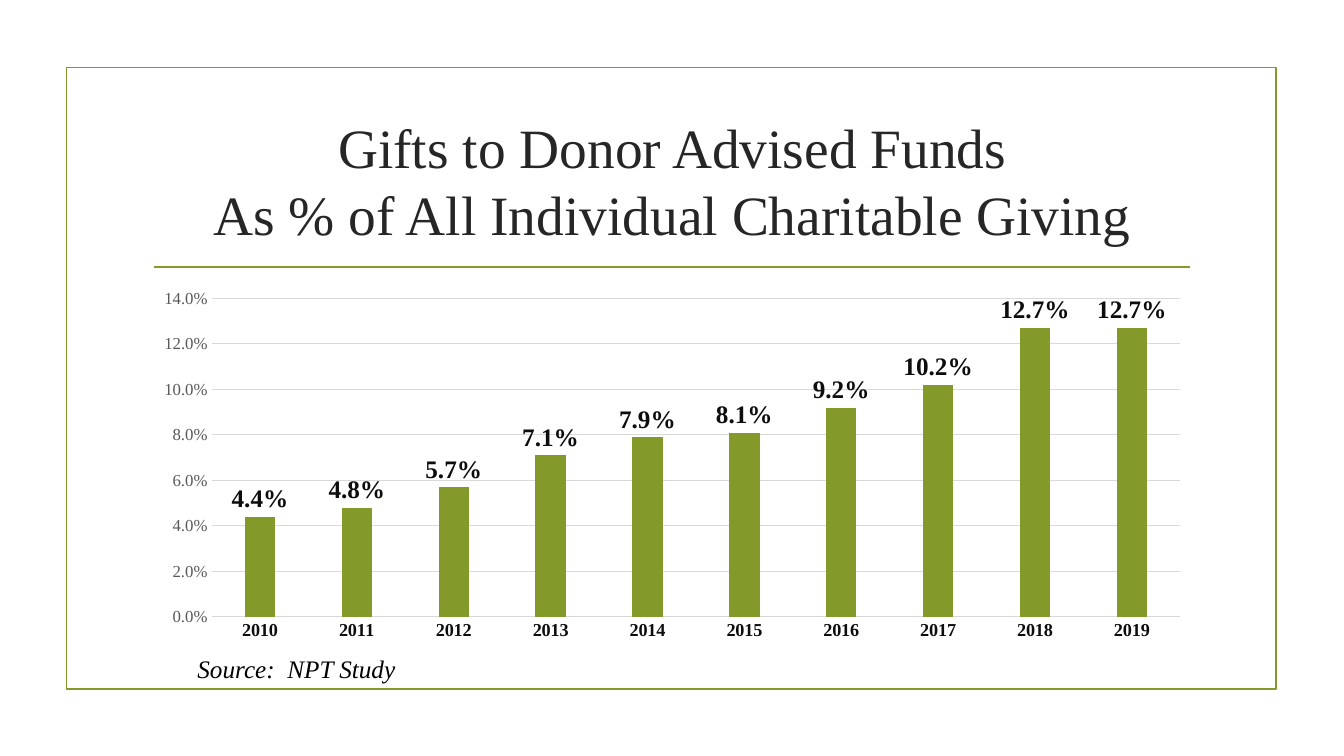
"""Builds a slide charting donor advised fund gifts as a share of individual giving."""
import pptx
import pptx.chart.data
import pptx.dml.color
import pptx.enum.chart
import pptx.enum.shapes
import pptx.enum.text
import pptx.oxml
import pptx.util

Pt = pptx.util.Pt
FONT = "Times New Roman"
GREEN, DARK, BLACK, GREY, PALE = "83992A", "0D0D0D", "000000", "595959", "D9D9D9"
TITLE = "Gifts to Donor Advised Funds\vAs % of All Individual Charitable Giving"
SOURCE = "Source:  NPT Study"
FIRST_YEAR = 2010
SHARES = [0.044, 0.048, 0.057, 0.071, 0.079, 0.081, 0.092, 0.102, 0.127, 0.127]

SLIDE_SIZE = (960, 540)
FRAME = (47.5, 48.2, 864, 444.2)
RULE = (110.2, 190.8, 850.3, 190.8)
CONTENT_LEFT, CONTENT_WIDTH = 102.2, 756
TITLE_BOX = (CONTENT_LEFT, 77, CONTENT_WIDTH, 103)
CHART_BOX = (CONTENT_LEFT, 201.6, CONTENT_WIDTH, 261.4)
SOURCE_BOX = (133.9, 463, 267.1, 29)


def points(values):
    return [Pt(value) for value in values]


def color(hex_text):
    return pptx.dml.color.RGBColor.from_string(hex_text)


def set_font(font, size, hex_text, bold=False, italic=False):
    font.name, font.size, font.bold, font.italic = FONT, Pt(size), bold, italic
    font.color.rgb = color(hex_text)


def set_line(line, hex_text, width):
    line.color.rgb = color(hex_text)
    line.width = Pt(width)


def add_text(slide, text, box, size, hex_text, italic=False, align=None, anchor=None):
    shape = slide.shapes.add_textbox(*points(box))
    frame = shape.text_frame
    frame.word_wrap = True
    frame.vertical_anchor = anchor
    paragraph = frame.paragraphs[0]
    paragraph.text = text
    paragraph.alignment = align
    set_font(paragraph.font, size, hex_text, italic=italic)


def add_border(slide):
    frame = slide.shapes.add_shape(pptx.enum.shapes.MSO_SHAPE.RECTANGLE, *points(FRAME))
    frame.shadow.inherit = False
    frame.fill.background()
    set_line(frame.line, GREEN, 1.25)
    rule = slide.shapes.add_connector(pptx.enum.shapes.MSO_CONNECTOR.STRAIGHT, *points(RULE))
    set_line(rule.line, GREEN, 1.25)
    effects = pptx.oxml.parse_xml(
        '<a:effectLst xmlns:a="http://schemas.openxmlformats.org/drawingml/2006/main"/>')
    rule.element.spPr.append(effects)


def add_share_chart(slide):
    data = pptx.chart.data.CategoryChartData(number_format="0.0%")
    data.categories = [str(FIRST_YEAR + index) for index in range(len(SHARES))]
    data.add_series("Series 1", SHARES)
    kind = pptx.enum.chart.XL_CHART_TYPE.COLUMN_CLUSTERED
    chart = slide.shapes.add_chart(kind, *points(CHART_BOX), data).chart
    chart.has_legend = chart.has_title = False
    set_font(chart.font, 10, BLACK)

    plot = chart.plots[0]
    plot.gap_width, plot.overlap, plot.vary_by_categories = 219, -27, False
    series = plot.series[0]
    series.format.fill.solid()
    series.format.fill.fore_color.rgb = color(GREEN)
    labels = series.data_labels
    labels.show_value = True
    labels.position = pptx.enum.chart.XL_LABEL_POSITION.OUTSIDE_END
    set_font(labels.font, 18, DARK, bold=True)

    years, shares = chart.category_axis, chart.value_axis
    for axis in (years, shares):
        axis.major_tick_mark = axis.minor_tick_mark = pptx.enum.chart.XL_TICK_MARK.NONE
    set_font(years.tick_labels.font, 13, DARK, bold=True)
    set_line(years.format.line, PALE, 0.75)
    set_font(shares.tick_labels.font, 12, GREY)
    shares.tick_labels.number_format = "0.0%"
    shares.tick_labels.number_format_is_linked = False
    shares.minimum_scale, shares.maximum_scale, shares.major_unit = 0, 0.14, 0.02
    shares.format.line.fill.background()
    set_line(shares.major_gridlines.format.line, PALE, 0.75)


def main():
    presentation = pptx.Presentation()
    presentation.slide_width, presentation.slide_height = points(SLIDE_SIZE)
    slide = presentation.slides.add_slide(presentation.slide_layouts[6])
    add_border(slide)
    add_text(slide, TITLE, TITLE_BOX, 39.6, "262626",
             align=pptx.enum.text.PP_ALIGN.CENTER, anchor=pptx.enum.text.MSO_ANCHOR.MIDDLE)
    add_share_chart(slide)
    add_text(slide, SOURCE, SOURCE_BOX, 18, BLACK, italic=True)
    presentation.save("out.pptx")


if __name__ == "__main__":
    main()
